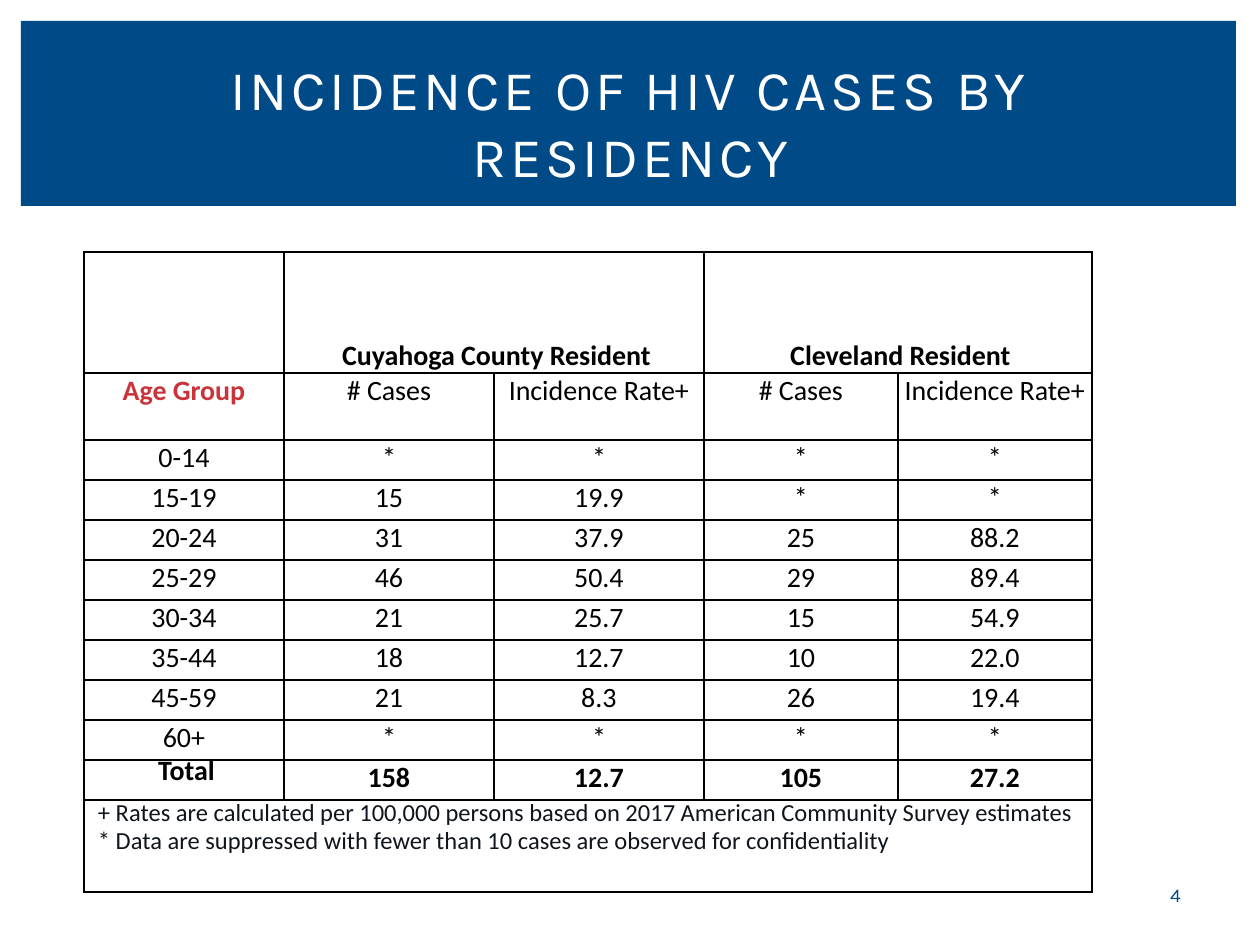
"""Builds the slide on the incidence of HIV cases by residency."""
from lxml.etree import SubElement
from pptx import Presentation
from pptx.dml.color import RGBColor
from pptx.enum.shapes import MSO_SHAPE
from pptx.enum.text import MSO_ANCHOR as ANCHOR, PP_ALIGN as ALIGN
from pptx.oxml.ns import qn
from pptx.util import Pt

EMU_PER_PX = 914400 / 126
COLORS = {"blue": "004B87", "white": "FFFFFF", "black": "000000", "red": "CB333B", "ink": "0F151C"}
TITLE = "INCIDENCE OF HIV CASES BY RESIDENCY"
PAGE = "4"
RESIDENCIES = ["Cuyahoga County Resident", "Cleveland Resident"]
HEADINGS = ["Age Group", "# Cases", "Incidence Rate+", "# Cases", "Incidence Rate+"]
AGE_GROUPS = [
    ["0-14", "*", "*", "*", "*"],
    ["15-19", "15", "19.9", "*", "*"],
    ["20-24", "31", "37.9", "25", "88.2"],
    ["25-29", "46", "50.4", "29", "89.4"],
    ["30-34", "21", "25.7", "15", "54.9"],
    ["35-44", "18", "12.7", "10", "22.0"],
    ["45-59", "21", "8.3", "26", "19.4"],
    ["60+", "*", "*", "*", "*"],
]
TOTALS = ["Total", "158", "12.7", "105", "27.2"]
NOTES = [
    "+ Rates are calculated per 100,000 persons based on 2017 American Community Survey estimates",
    "* Data are suppressed with fewer than 10 cases are observed for confidentiality",
]
COLUMN_WIDTHS = [200, 210, 210, 194, 194]
ROW_HEIGHTS = [121, 67] + [40] * (len(AGE_GROUPS) + 1) + [92]


def px(length):
    return round(length * EMU_PER_PX)


def box(left, top, width, height):
    return [px(length) for length in (left, top, width, height)]


def style(paragraph, size, color, font="Calibri", bold=False, align=ALIGN.CENTER):
    paragraph.alignment = align
    for face in [paragraph.font] + [run.font for run in paragraph.runs]:
        face.size, face.name, face.bold = Pt(size), font, bold
        face.color.rgb = RGBColor.from_string(COLORS[color])


def add_borders(cell):
    properties = cell._tc.get_or_add_tcPr()
    for side in ("lnL", "lnR", "lnT", "lnB"):
        line = SubElement(properties, qn(f"a:{side}"), w=str(Pt(1)))
        fill = SubElement(line, qn("a:solidFill"))
        SubElement(fill, qn("a:srgbClr"), val=COLORS["black"])


def write(cell, lines, size=16, color="black", bold=False, align=ALIGN.CENTER, indented=False):
    side, top = (9, 0) if indented else (1, 1)
    cell.margin_left = cell.margin_right = px(side)
    cell.margin_top, cell.margin_bottom = px(top), 0
    cell.text_frame.text = "\n".join(lines)
    for paragraph in cell.text_frame.paragraphs:
        style(paragraph, size, color, bold=bold, align=align)
        if indented:
            paragraph.line_spacing = Pt(16)
            paragraph._p.get_or_add_pPr().set("marL", str(px(5)))


def add_heading(slide):
    band = slide.shapes.add_shape(MSO_SHAPE.RECTANGLE, *box(21, 21, 1215, 185))
    band.shadow.inherit = False
    band.fill.solid()
    band.fill.fore_color.rgb = RGBColor.from_string(COLORS["blue"])
    band.line.fill.background()
    title = slide.shapes.title
    title._element.addprevious(band._element)
    title.left, title.top, title.width, title.height = box(53, 49, 1155, 145)
    title.text_frame.text = TITLE
    title.text_frame.vertical_anchor = ANCHOR.MIDDLE
    heading = title.text_frame.paragraphs[0]
    style(heading, 32, "white", font="Karla")
    heading.runs[0].font._element.set("spc", "200")


def add_page_number(slide):
    frame = slide.shapes.add_textbox(*box(1135, 876, 81, 38)).text_frame
    frame.word_wrap = True
    frame.vertical_anchor = ANCHOR.MIDDLE
    frame.text = PAGE
    style(frame.paragraphs[0], 11, "blue", font="Karla")


def add_incidence_table(slide):
    size = sum(COLUMN_WIDTHS), sum(ROW_HEIGHTS)
    table = slide.shapes.add_table(len(ROW_HEIGHTS), len(COLUMN_WIDTHS), *box(84, 252, *size)).table
    table.first_row = table.horz_banding = False
    for column, width in zip(table.columns, COLUMN_WIDTHS):
        column.width = px(width)
    for row, height in zip(table.rows, ROW_HEIGHTS):
        row.height = px(height)
    for cell in table.iter_cells():
        add_borders(cell)
        cell.fill.background()

    for index, residency in enumerate(RESIDENCIES):
        first = 1 + 2 * index
        cell = table.cell(0, first)
        cell.merge(table.cell(0, first + 1))
        write(cell, [residency], bold=True, indented=True)
        cell.vertical_anchor = ANCHOR.BOTTOM

    body = [HEADINGS, *AGE_GROUPS, TOTALS]
    for row, values in enumerate(body, start=1):
        for column, value in enumerate(values):
            write(table.cell(row, column), [value], bold=values is TOTALS)
    write(table.cell(1, 0), HEADINGS[:1], color="red", bold=True)
    write(table.cell(len(body), 0), TOTALS[:1], bold=True, indented=True)

    last = len(ROW_HEIGHTS) - 1
    footer = table.cell(last, 0)
    footer.merge(table.cell(last, len(COLUMN_WIDTHS) - 1))
    write(footer, NOTES, size=14, color="ink", align=ALIGN.LEFT, indented=True)


def main():
    deck = Presentation()
    deck.slide_width, deck.slide_height = px(1260), px(945)
    slide = deck.slides.add_slide(deck.slide_layouts[5])
    add_heading(slide)
    add_page_number(slide)
    add_incidence_table(slide)
    deck.save("out.pptx")


if __name__ == "__main__":
    main()
